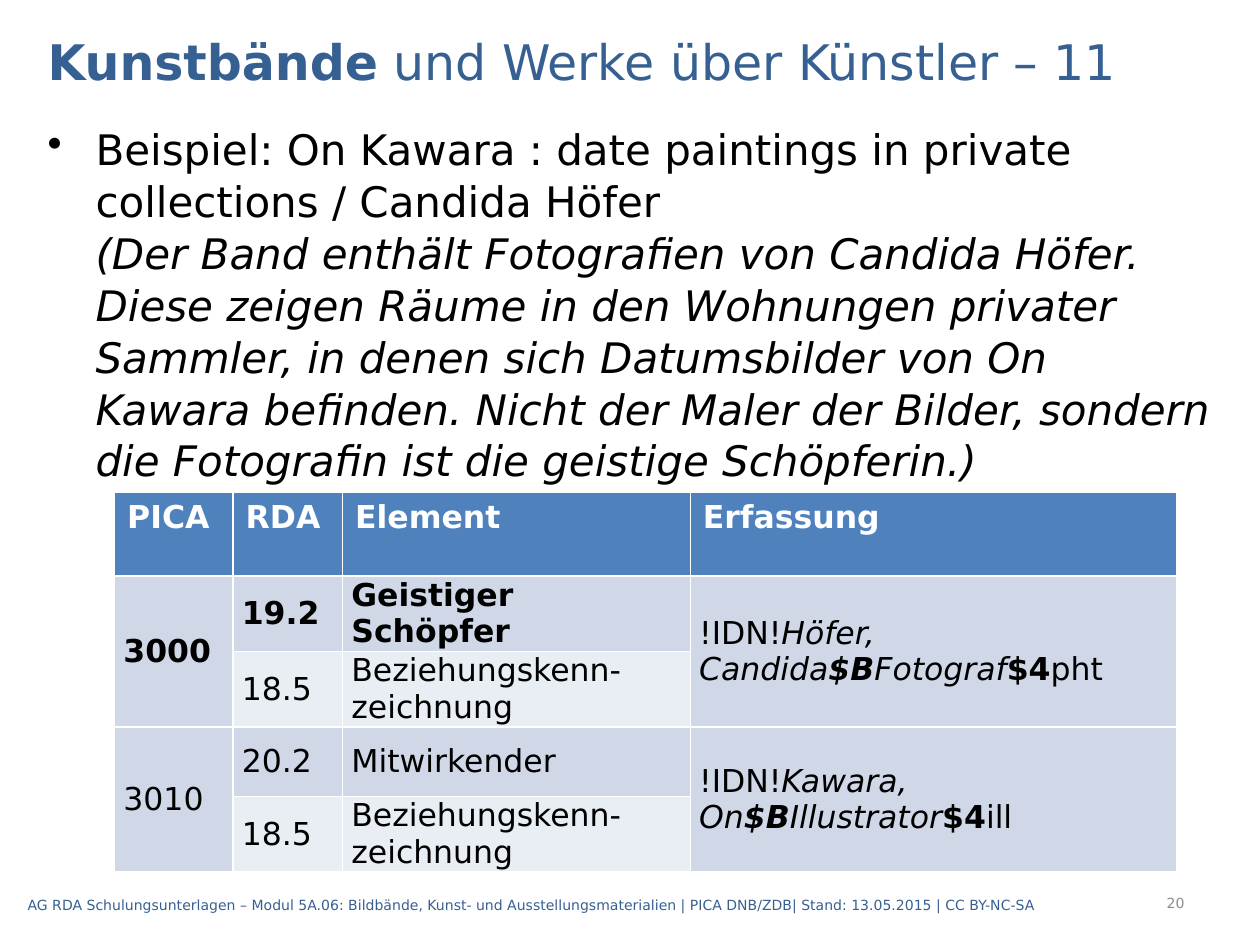
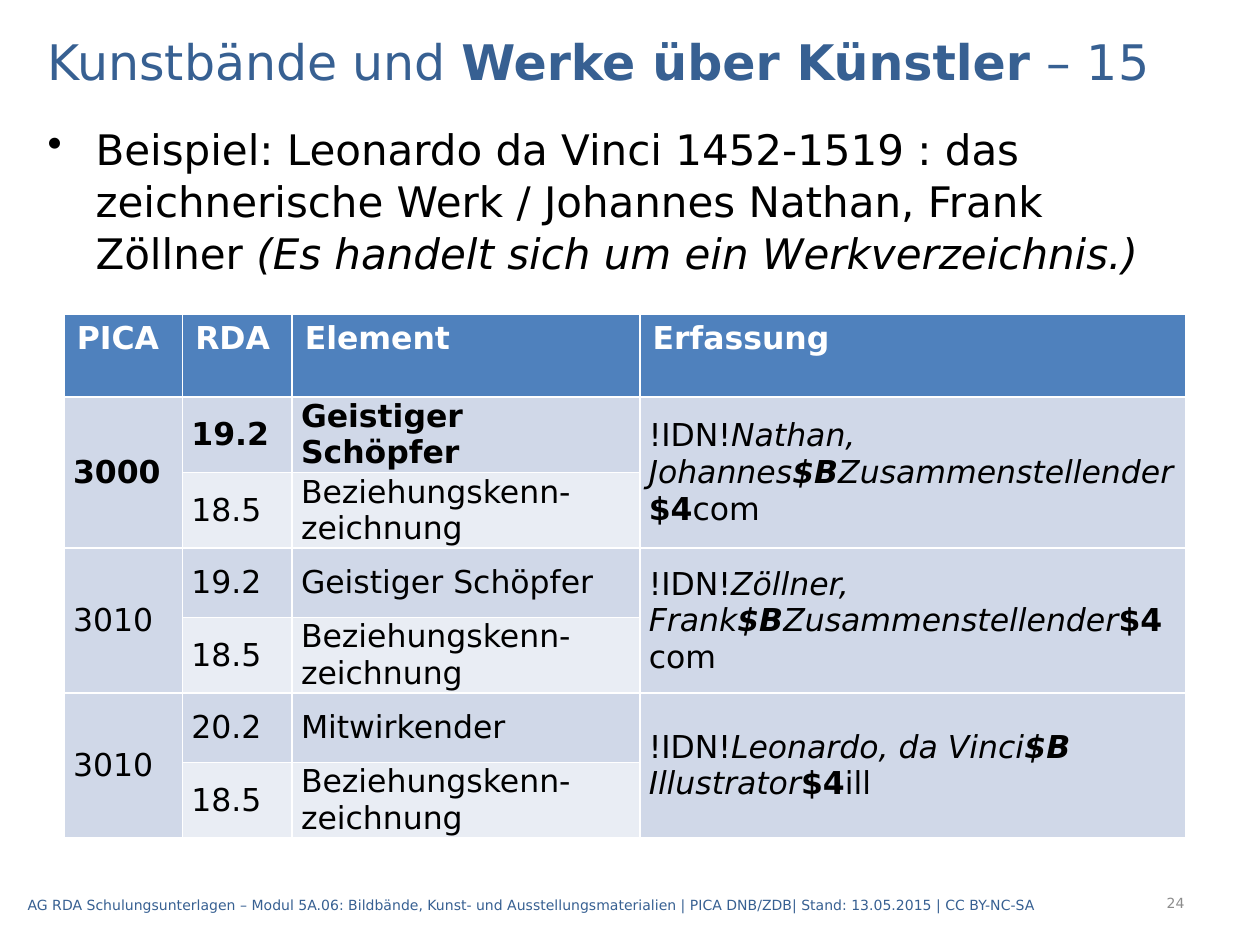
"""Build two training slides on cataloguing art books, each with a field table."""
import pptx
import pptx.util
import pptx.dml.color
import pptx.enum.text
import lxml.etree
import pptx.oxml.ns

Inches = pptx.util.Inches
Pt = pptx.util.Pt
MIDDLE = pptx.enum.text.MSO_ANCHOR.MIDDLE
TOP = pptx.enum.text.MSO_ANCHOR.TOP
FONT = "DejaVu Sans"
HUES = {
    "title": "376092", "text": "000000", "page": "8C8C8C", "white": "FFFFFF",
    "head": "4F81BD", "dark": "D0D8E8", "light": "E9EDF4",
}
FOOT = ("AG RDA Schulungsunterlagen – Modul 5A.06: Bildbände, Kunst- und "
        "Ausstellungsmaterialien | PICA DNB/ZDB| Stand: 13.05.2015 | CC BY-NC-SA")
HEADS = ["PICA", "RDA", "Element", "Erfassung"]
RELATE = ("18.5", "Beziehungskenn-zeichnung")

slides = [
    {
        "page": "20",
        "title": [("Kunstbände", "b"), (" und Werke über Künstler – 11", "")],
        "body": [
            ("Beispiel: On Kawara : date paintings in private collections / Candida Höfer", ""),
            ("\n", ""),
            ("(Der Band enthält Fotografien von Candida Höfer. Diese zeigen Räume in den "
             "Wohnungen privater Sammler, in denen sich Datumsbilder von On Kawara befinden. "
             "Nicht der Maler der Bilder, sondern die Fotografin ist die geistige "
             "Schöpferin.)", "i"),
        ],
        "place": (0.91, 3.91),
        "wide": 3.86,
        "fields": [
            ("3000", "19.2", "Geistiger Schöpfer", "Höfer, Candida", "Fotograf", "pht"),
            ("3010", "20.2", "Mitwirkender", "Kawara, On", "Illustrator", "ill"),
        ],
    },
    {
        "page": "24",
        "title": [("Kunstbände und ", ""), ("Werke über Künstler ", "b"), ("– 15", "")],
        "body": [
            ("Beispiel: Leonardo da Vinci 1452-1519 : das zeichnerische Werk / "
             "Johannes Nathan, Frank", ""),
            ("\n", ""),
            ("Zöllner ", ""),
            ("(Es handelt sich um ein Werkverzeichnis.)", "i"),
        ],
        "place": (0.51, 2.49),
        "wide": 4.33,
        "fields": [
            ("3000", "19.2", "Geistiger Schöpfer", "Nathan, Johannes", "Zusammenstellender", "com"),
            ("3010", "19.2", "Geistiger Schöpfer", "Zöllner, Frank", "Zusammenstellender", "com"),
            ("3010", "20.2", "Mitwirkender", "Leonardo, da Vinci", " Illustrator", "ill"),
        ],
    },
]


def write(frame, runs, size, hue, anchor=MIDDLE):
    frame.word_wrap = True
    frame.vertical_anchor = anchor
    para = frame.paragraphs[0]
    for text, style in runs:
        if text == "\n":
            para.add_line_break()
            continue
        run = para.add_run()
        run.text = text
        run.font.name = FONT
        run.font.size = Pt(size)
        run.font.bold = "b" in style
        run.font.italic = "i" in style
        run.font.color.rgb = pptx.dml.color.RGBColor.from_string(HUES[hue])
    return para


def fill(cell, runs, hue, ground):
    cell.fill.solid()
    cell.fill.fore_color.rgb = pptx.dml.color.RGBColor.from_string(HUES[ground])
    para = write(cell.text_frame, runs, 18, hue)
    if ground == "head":
        cell.vertical_anchor = TOP
        return
    cell.vertical_anchor = MIDDLE
    cell.margin_left = cell.margin_right = Inches(0.07)
    cell.margin_top = cell.margin_bottom = 0
    para.space_after = Pt(6)


deck = pptx.Presentation()
deck.slide_width = Inches(10)
deck.slide_height = Inches(7.5)

for data in slides:
    slide = deck.slides.add_slide(deck.slide_layouts[6])
    boxes = [
        ((0.28, 0.2, 9.45, 0.56), data["title"], 28, "title", MIDDLE),
        ((0.28, 0.92, 9.45, 5.98), data["body"], 24, "text", TOP),
        ((0.12, 6.98, 9.21, 0.4), [(FOOT, "")], 8, "title", MIDDLE),
        ((7.91, 6.97, 1.59, 0.4), [(data["page"], "")], 8, "page", MIDDLE),
    ]
    paras = []
    for area, runs, size, hue, anchor in boxes:
        box = slide.shapes.add_textbox(*map(Inches, area))
        paras.append(write(box.text_frame, runs, size, hue, anchor))

    title, body, foot, page = paras
    page.alignment = pptx.enum.text.PP_ALIGN.RIGHT
    body.space_before = Pt(1.5)
    body.line_spacing = 1.03
    props = body._p.get_or_add_pPr()
    props.set("marL", str(Inches(0.38)))
    props.set("indent", str(-Inches(0.38)))
    mark = lxml.etree.SubElement(props, pptx.oxml.ns.qn("a:buChar"))
    mark.set("char", "•")

    cols = [0.94, 0.87, 2.76, data["wide"]]
    rows = [0.66, 0.57] + [0.55] * (2 * len(data["fields"]) - 1)
    left, top = data["place"]
    grid = slide.shapes.add_table(
        len(rows), len(cols), Inches(left), Inches(top),
        Inches(sum(cols)), Inches(sum(rows))).table
    for col, width in zip(grid.columns, cols):
        col.width = Inches(width)
    for row, height in zip(grid.rows, rows):
        row.height = Inches(height)

    for num, head in enumerate(HEADS):
        fill(grid.cell(0, num), [(head, "b")], "white", "head")

    for num, (pica, rda, label, name, role, code) in enumerate(data["fields"]):
        line = 2 * num + 1
        style = "b" if pica == "3000" else ""
        entry = [("!IDN!", ""), (name, "i"), ("$B", "bi"), (role, "i"), ("$4", "b"), (code, "")]
        for col in (0, 3):
            grid.cell(line, col).merge(grid.cell(line + 1, col))
        for col, runs in enumerate([[(pica, style)], [(rda, style)], [(label, style)], entry]):
            fill(grid.cell(line, col), runs, "text", "dark")
        for col, text in enumerate(RELATE, 1):
            fill(grid.cell(line + 1, col), [(text, "")], "text", "light")

deck.save("out.pptx")
